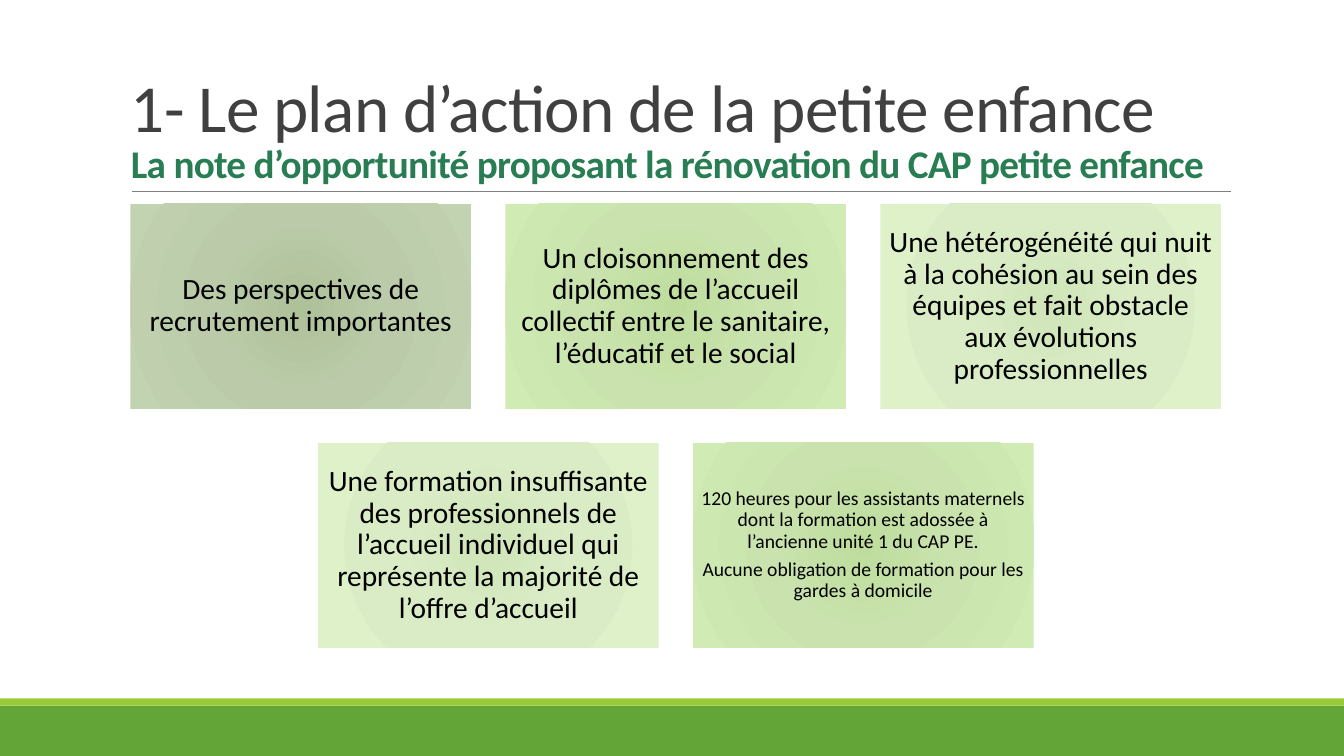
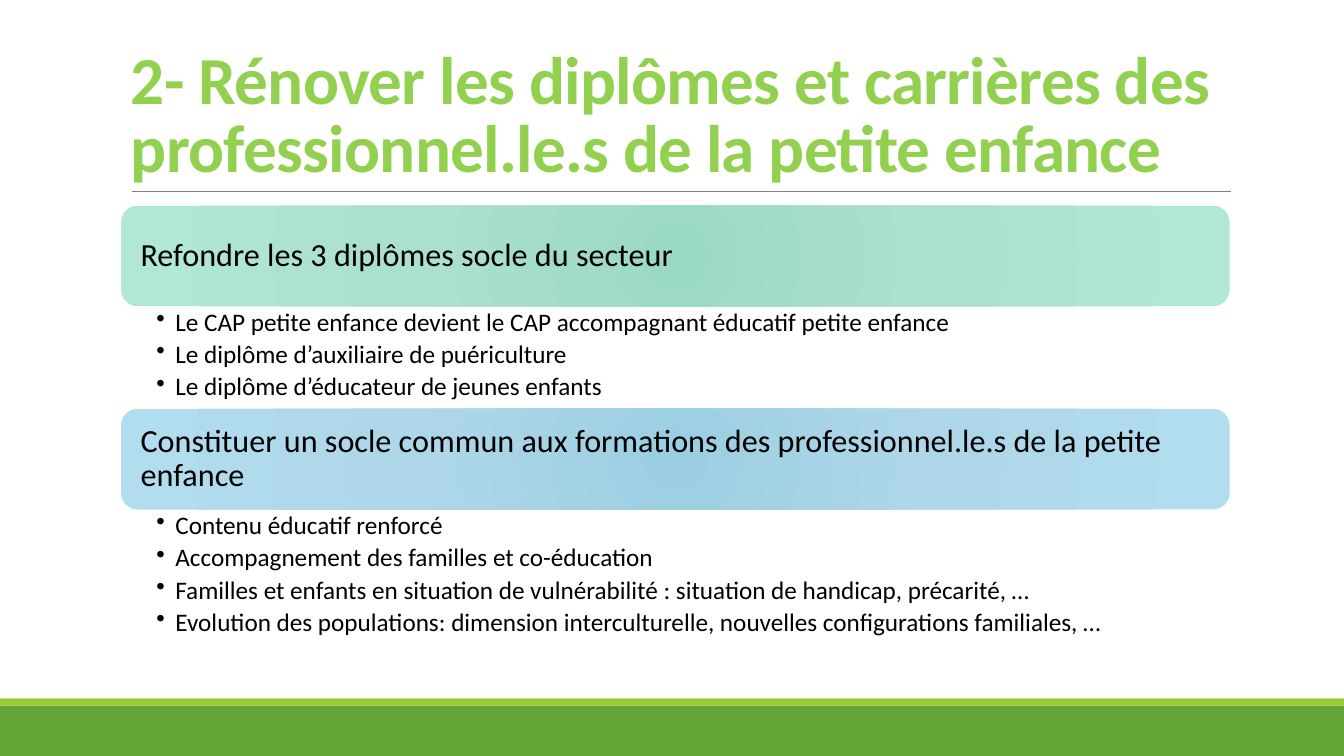
"""Build two slides on the renewal of early childhood diplomas."""
import pptx
import pptx.dml.color
import pptx.enum.shapes
import pptx.enum.text
import pptx.oxml
import pptx.oxml.ns
import pptx.util
from lxml import etree

Cm = pptx.util.Cm
Pt = pptx.util.Pt
RGBColor = pptx.dml.color.RGBColor
Shape = pptx.enum.shapes.MSO_SHAPE
Anchor = pptx.enum.text.MSO_ANCHOR
Align = pptx.enum.text.PP_ALIGN
qn = pptx.oxml.ns.qn

FONT = "Calibri"
WHITE = RGBColor(0xFF, 0xFF, 0xFF)
BLACK = RGBColor(0x00, 0x00, 0x00)
DARK = RGBColor(0x40, 0x40, 0x40)
GREY = RGBColor(0x80, 0x80, 0x80)
GREEN = RGBColor(0x63, 0xA5, 0x37)
LIME = RGBColor(0x99, 0xCB, 0x38)
PINE = RGBColor(0x29, 0x7D, 0x53)
BRIGHT = RGBColor(0x92, 0xD0, 0x50)

SAGE = (RGBColor(0xAE, 0xC1, 0x99), RGBColor(0xBB, 0xCB, 0xA9), RGBColor(0xC2, 0xD3, 0xB1))
LEAF = (RGBColor(0xBE, 0xDD, 0x9D), RGBColor(0xCA, 0xE3, 0xAE), RGBColor(0xD0, 0xEB, 0xB3))
PALE = (RGBColor(0xD0, 0xE5, 0xB9), RGBColor(0xDA, 0xEC, 0xC6), RGBColor(0xDE, 0xF1, 0xC9))
MINT = (RGBColor(0x9A, 0xD9, 0xC5), RGBColor(0xAB, 0xE0, 0xCF), RGBColor(0xB1, 0xE7, 0xD6))
SKY = (RGBColor(0x9C, 0xCE, 0xE1), RGBColor(0xAD, 0xD7, 0xE8), RGBColor(0xB2, 0xDD, 0xEF))
STOPS = (0, 45, 100)

WIDE, HIGH = 33.87, 19.05
LEFT, SPAN = 3.05, 27.94

CARDS = [
    [
        (SAGE, 21, ["Des perspectives de recrutement importantes"]),
        (LEAF, 21, ["Un cloisonnement des diplômes de l’accueil collectif entre le sanitaire, "
                    "l’éducatif et le social"]),
        (PALE, 21, ["Une hétérogénéité qui nuit à la cohésion au sein des équipes et fait "
                    "obstacle aux évolutions professionnelles"]),
    ],
    [
        (PALE, 21, ["Une formation insuffisante des professionnels de l’accueil individuel "
                    "qui représente la majorité de l’offre d’accueil"]),
        (LEAF, 14, ["120 heures pour les assistants maternels dont la formation est adossée "
                    "à l’ancienne unité 1 du CAP PE.",
                    "Aucune obligation de formation pour les gardes à domicile"]),
    ],
]

THEMES = [
    (MINT, "Refondre les 3 diplômes socle du secteur", [
        "Le CAP petite enfance devient le CAP accompagnant éducatif petite enfance",
        "Le diplôme d’auxiliaire de puériculture",
        "Le diplôme d’éducateur de jeunes enfants",
    ]),
    (SKY, "Constituer un socle commun aux formations des professionnel.le.s de la petite enfance", [
        "Contenu éducatif renforcé",
        "Accompagnement des familles et co-éducation",
        "Familles et enfants en situation de vulnérabilité : situation de handicap, précarité, …",
        "Evolution des populations: dimension interculturelle, nouvelles configurations familiales, …",
    ]),
]


def add_run(para, text, size, color, bold=False):
    run = para.add_run()
    run.text = text
    font = run.font
    font.name, font.size, font.bold = FONT, Pt(size), bold
    font.color.rgb = color
    return run


def set_frame(shape, anchor, left, top, right, base):
    frame = shape.text_frame
    frame.word_wrap = True
    frame.vertical_anchor = anchor
    frame.margin_left, frame.margin_top = Cm(left), Cm(top)
    frame.margin_right, frame.margin_bottom = Cm(right), Cm(base)
    return frame


def add_paras(frame, texts, size, align, after):
    for spot, text in enumerate(texts):
        para = frame.add_paragraph() if spot else frame.paragraphs[0]
        para.alignment = align
        para.line_spacing = 0.9
        para.space_after = Pt(size * after)
        add_run(para, text, size, BLACK)


def add_block(slide, kind, left, top, width, height):
    shape = slide.shapes.add_shape(kind, Cm(left), Cm(top), Cm(width), Cm(height))
    shape.shadow.inherit = False
    shape.line.fill.background()
    return shape


def add_band(slide, top, height, color):
    band = add_block(slide, Shape.RECTANGLE, 0, top, WIDE, height)
    band.fill.solid()
    band.fill.fore_color.rgb = color


def fill_glow(shape, colors):
    grad = pptx.oxml.parse_xml(
        '<a:gradFill xmlns:a="http://schemas.openxmlformats.org/drawingml/2006/main" '
        'rotWithShape="1"><a:gsLst/><a:path path="circle"><a:fillToRect l="100000" '
        't="100000" r="100000" b="100000"/></a:path></a:gradFill>')
    for stop, color in zip(STOPS, colors):
        mark = etree.SubElement(grad[0], qn("a:gs"), pos=str(stop * 1000))
        etree.SubElement(mark, qn("a:srgbClr"), val=str(color))
    shape.element.spPr.find(qn("a:prstGeom")).addnext(grad)


def add_panel(slide, kind, box, colors, texts, size, align, inset):
    panel = add_block(slide, kind, *box)
    fill_glow(panel, colors)
    frame = set_frame(panel, Anchor.MIDDLE, *[inset] * 4)
    add_paras(frame, texts, size, align, 0.35)


def add_list(slide, top, height, items):
    box = slide.shapes.add_textbox(Cm(LEFT), Cm(top), Cm(SPAN), Cm(height))
    frame = set_frame(box, Anchor.TOP, 0.89, 0.08, 0.46, 0.08)
    add_paras(frame, items, 18, Align.LEFT, 0.2)
    for para in frame.paragraphs:
        para.level = 1
        props = para._p.get_or_add_pPr()
        props.set("marL", str(Cm(0.48)))
        props.set("indent", str(-Cm(0.48)))
        etree.SubElement(props, qn("a:buChar"), char="•")


def add_title(slide, lines):
    box = slide.shapes.add_textbox(Cm(LEFT), Cm(0.79), Cm(SPAN), Cm(4.04))
    frame = set_frame(box, Anchor.BOTTOM, 0.25, 0.13, 0.25, 0.13)
    para = frame.paragraphs[0]
    para.line_spacing = 0.85
    for spot, line in enumerate(lines):
        if spot:
            para.add_line_break()
        run = add_run(para, *line)
        run.font._element.set("spc", "-50")


def add_slide(deck, lines):
    slide = deck.slides.add_slide(deck.slide_layouts[6])
    slide.background.fill.solid()
    slide.background.fill.fore_color.rgb = WHITE
    add_band(slide, 17.78, 1.27, GREEN)
    add_band(slide, 17.6, 0.18, LIME)
    rule = slide.shapes.add_connector(
        pptx.enum.shapes.MSO_CONNECTOR.STRAIGHT, Cm(3.32), Cm(4.83), Cm(31.01), Cm(4.83))
    rule.line.color.rgb = GREY
    rule.line.width = Pt(0.5)
    etree.SubElement(rule.element.spPr, qn("a:effectLst"))
    add_title(slide, lines)
    return slide


def add_cards(slide):
    width, height, gap, mid, top = 8.59, 5.16, 0.86, 17.03, 5.14
    for level, row in enumerate(CARDS):
        start = mid - (len(row) * (width + gap) - gap) / 2
        for spot, (colors, size, texts) in enumerate(row):
            box = (start + spot * (width + gap), top + level * (height + gap), width, height)
            inset = size * 0.01
            add_panel(slide, Shape.RECTANGLE, box, colors, texts, size, Align.CENTER, inset)


def add_themes(slide):
    top, height, line = 5.18, 2.54, 0.86
    for colors, head, items in THEMES:
        box = (LEFT, top, SPAN, height)
        add_panel(slide, Shape.ROUNDED_RECTANGLE, box, colors, [head], 23, Align.LEFT, 0.37)
        add_list(slide, top + height, line * len(items), items)
        top += height + line * len(items)


def main():
    deck = pptx.Presentation()
    deck.slide_width, deck.slide_height = Cm(WIDE), Cm(HIGH)
    add_cards(add_slide(deck, [
        ("1- Le plan d’action de la petite enfance", 48, DARK),
        ("La note d’opportunité proposant la rénovation du CAP petite enfance", 28, PINE, True),
    ]))
    add_themes(add_slide(deck, [
        ("2- Rénover les diplômes et carrières des professionnel.le.s de la petite enfance",
         48, BRIGHT, True),
    ]))
    deck.save("out.pptx")


if __name__ == "__main__":
    main()
